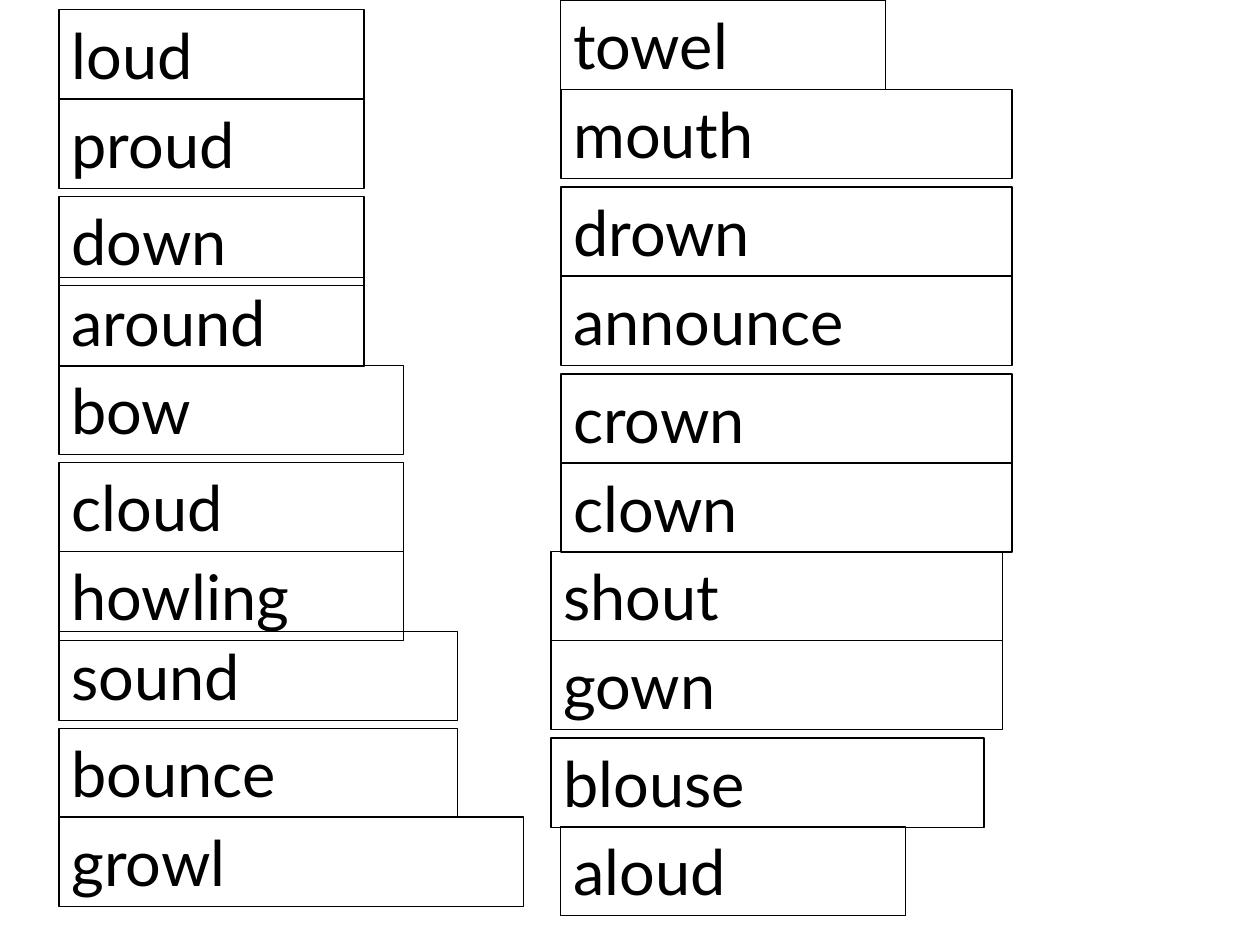
from dataclasses import dataclass

from pptx import Presentation
from pptx.dml.color import RGBColor
from pptx.enum.text import MSO_AUTO_SIZE
from pptx.util import Pt


@dataclass(frozen=True)
class Theme:
    font: str = "Lato"
    word_size: float = 36
    ink: RGBColor = RGBColor(0, 0, 0)
    border_width: float = 0.75
    card_height: float = 51


class WordSlide:
    def __init__(self, slide, theme):
        self.slide = slide
        self.theme = theme

    def word_card(self, word, left, top, width):
        theme = self.theme
        card = self.slide.shapes.add_textbox(
            Pt(left), Pt(top), Pt(width), Pt(theme.card_height))
        card.line.color.rgb = theme.ink
        card.line.width = Pt(theme.border_width)
        frame = card.text_frame
        frame.word_wrap = True
        frame.auto_size = MSO_AUTO_SIZE.SHAPE_TO_FIT_TEXT
        frame.text = word
        font = frame.paragraphs[0].font
        font.name = theme.font
        font.size = Pt(theme.word_size)
        font.color.rgb = theme.ink

    def word_column(self, left, cards):
        """Draw cards given as (word, top, width, shift from the column's left)."""
        for word, top, width, shift in cards:
            self.word_card(word, left + shift, top, width)


LEFT_CARDS = [
    ("loud", 5.6, 174.3, 0),
    ("proud", 56.6, 174.3, 0),
    ("down", 112.3, 174.3, 0),
    ("around", 158.4, 174.3, 0),
    ("bow", 208.8, 197, 0),
    ("cloud", 264.2, 197, 0),
    ("howling", 315.2, 197, 0),
    ("sound", 360.7, 227.5, 0),
    ("bounce", 416.2, 227.5, 0),
    ("growl", 466.9, 265.5, 0),
]
RIGHT_CARDS = [
    ("towel", 0, 185.5, 0),
    ("mouth", 51, 257.8, 0),
    ("drown", 106.8, 257.8, 0),
    ("announce", 157.7, 257.8, 0),
    ("crown", 213.8, 257.8, 0),
    ("clown", 264.5, 257.8, 0),
    ("shout", 315.2, 257.8, -5.6),
    ("gown", 365.8, 257.8, -5.6),
    ("blouse", 421.8, 247.5, -5.6),
    ("aloud", 472.3, 197, 0),
]


def main():
    presentation = Presentation()
    presentation.slide_width = Pt(720)
    presentation.slide_height = Pt(540)
    slide = presentation.slides.add_slide(presentation.slide_layouts[6])
    words = WordSlide(slide, Theme())
    words.word_column(33.8, LEFT_CARDS)
    words.word_column(320.5, RIGHT_CARDS)
    presentation.save("out.pptx")


if __name__ == "__main__":
    main()
